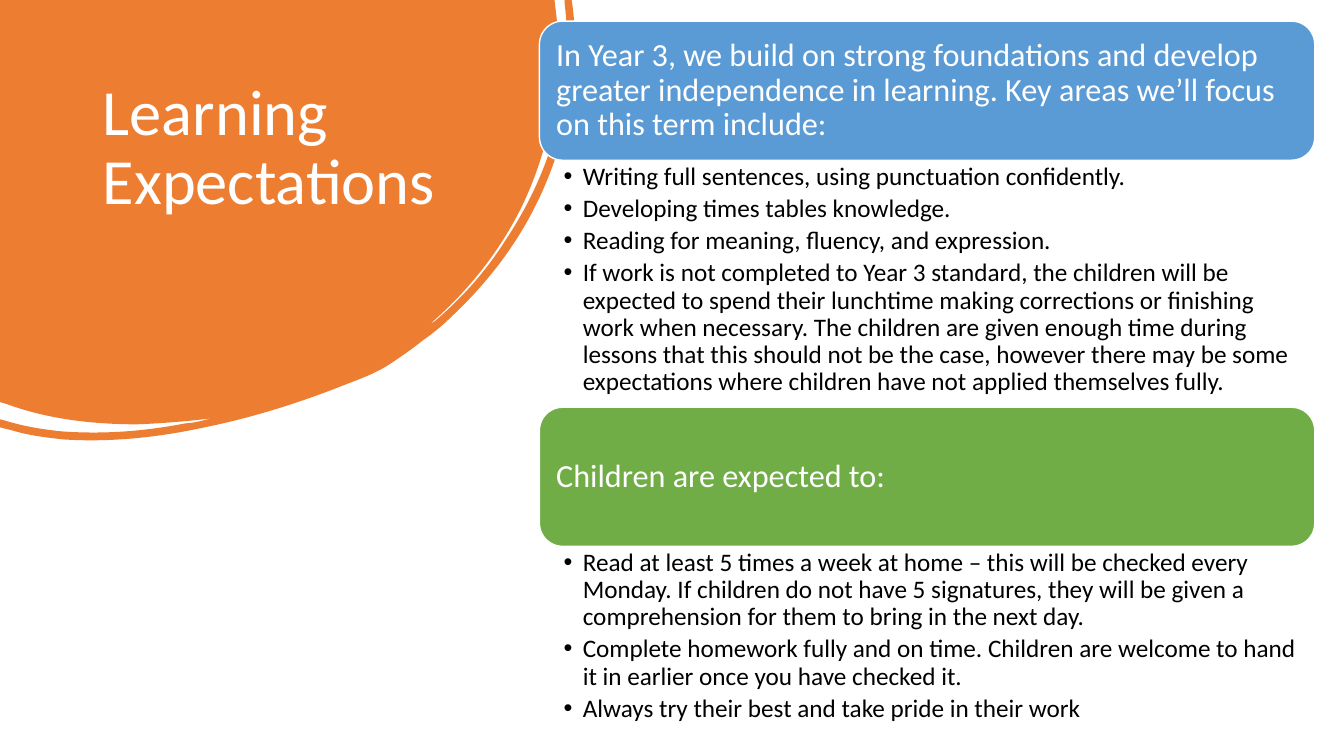
"""Build the Learning Expectations slide."""
from lxml import etree
from pptx import Presentation
from pptx.dml.color import RGBColor
from pptx.enum import shapes, text
from pptx.oxml import ns
from pptx.util import Inches, Pt

ORANGE = RGBColor(0xED, 0x7D, 0x31)
BLUE = RGBColor(0x5B, 0x9B, 0xD5)
GREEN = RGBColor(0x70, 0xAD, 0x47)
WHITE = RGBColor(0xFF, 0xFF, 0xFF)
BLACK = RGBColor(0, 0, 0)

LEFT, WIDTH, HEADING_HEIGHT = 5.35, 7.69, 1.38
BLOB_WIDTH, BLOB_HEIGHT = Inches(5.71), Inches(4.37)

SECTIONS = [
    (0.21, 2.45, BLUE,
     "In Year 3, we build on strong foundations and develop greater independence "
     "in learning. Key areas we’ll focus on this term include:",
     ["Writing full sentences, using punctuation confidently.",
      "Developing times tables knowledge.",
      "Reading for meaning, fluency, and expression.",
      "If work is not completed to Year 3 standard, the children will be expected "
      "to spend their lunchtime making corrections or finishing work when necessary. "
      "The children are given enough time during lessons that this should not be the "
      "case, however there may be some expectations where children have not applied "
      "themselves fully."]),
    (4.04, 1.87, GREEN,
     "Children are expected to:",
     ["Read at least 5 times a week at home – this will be checked every Monday. "
      "If children do not have 5 signatures, they will be given a comprehension for "
      "them to bring in the next day.",
      "Complete homework fully and on time. Children are welcome to hand it in "
      "earlier once you have checked it.",
      "Always try their best and take pride in their work"]),
]

BLOB_OUTLINE = [
    (5.5, 0), (5.52, 0.17),
    (5.53, 0.26, 5.53, 0.36, 5.53, 0.45),
    (5.53, 1.01, 5.42, 1.54, 5.18, 2.04),
    (4.96, 2.49, 4.65, 2.88, 4.27, 3.21),
    (4.29, 3.21, 4.3, 3.19, 4.32, 3.18),
    (4.59, 2.95, 4.82, 2.69, 5.01, 2.39),
    (5.43, 1.76, 5.65, 1.07, 5.62, 0.3),
    (5.62, 0.21, 5.61, 0.12, 5.6, 0.03),
    (5.6, 0), (5.67, 0), (5.68, 0.07),
    (5.74, 0.54, 5.68, 1.02, 5.53, 1.5),
    (5.33, 2.14, 4.97, 2.68, 4.48, 3.14),
    (4.39, 3.23, 4.29, 3.31, 4.19, 3.38),
    (4.09, 3.46, 3.99, 3.53, 3.87, 3.61),
    (3.75, 3.69, 3.6, 3.75, 3.44, 3.81),
    (2.99, 3.99, 2.52, 4.14, 2.03, 4.24),
    (1.57, 4.34, 1.1, 4.39, 0.63, 4.36),
    (0.45, 4.34, 0.28, 4.32, 0.12, 4.27),
    (0, 4.24), (0, 4.16), (0.04, 4.17),
    (0.23, 4.23, 0.42, 4.26, 0.61, 4.28),
    (1.03, 4.31, 1.43, 4.28, 1.84, 4.2),
    (1.89, 4.2, 1.93, 4.19, 1.98, 4.18),
    (2.02, 4.17, 2.06, 4.16, 2.1, 4.15),
    (1.86, 4.18, 1.61, 4.2, 1.36, 4.21),
    (0.92, 4.21, 0.48, 4.16, 0.07, 4.01),
    (0, 3.99),
]


def write(frame, lines, size, color, insets=(0.1, 0.05, 0.1, 0.05),
          anchor=text.MSO_ANCHOR.TOP, after=0, bullet=False):
    frame.word_wrap = True
    frame.auto_size = text.MSO_AUTO_SIZE.NONE
    frame.vertical_anchor = anchor
    (frame.margin_left, frame.margin_top,
     frame.margin_right, frame.margin_bottom) = map(Inches, insets)
    for index, line in enumerate(lines):
        para = frame.add_paragraph() if index else frame.paragraphs[0]
        para.alignment = text.PP_ALIGN.LEFT
        para.line_spacing = 0.9
        para.space_before = Pt(0)
        para.space_after = Pt(after)
        span = para.add_run()
        span.text = line
        span.font.name = "Calibri"
        span.font.size = Pt(size)
        span.font.color.rgb = color
        if bullet:
            para.level = 1
            properties = para._p.get_or_add_pPr()
            properties.set("marL", str(Inches(0.19)))
            properties.set("indent", str(Inches(-0.19)))
            etree.SubElement(properties, ns.qn("a:buFont"), typeface="Arial")
            etree.SubElement(properties, ns.qn("a:buChar"), char="•")


deck = Presentation()
deck.slide_width = Inches(13.33)
deck.slide_height = Inches(7.5)
page = deck.slides.add_slide(deck.slide_layouts[5])

builder = page.shapes.build_freeform(0, 0)
builder.add_line_segments([(Inches(part[-2]), Inches(part[-1])) for part in BLOB_OUTLINE])
blob = builder.convert_to_shape()
blob.width, blob.height = BLOB_WIDTH, BLOB_HEIGHT
blob.shadow.inherit = False
blob.fill.solid()
blob.fill.fore_color.rgb = ORANGE
blob.line.fill.background()

outline = next(blob._element.iter(ns.qn("a:path")))
outline.set("w", str(BLOB_WIDTH))
outline.set("h", str(BLOB_HEIGHT))
for segment, part in zip(outline.findall(ns.qn("a:lnTo")), BLOB_OUTLINE):
    if len(part) == 6:
        curve = etree.Element(ns.qn("a:cubicBezTo"))
        for x, y in zip(part[::2], part[1::2]):
            etree.SubElement(curve, ns.qn("a:pt"), x=str(Inches(x)), y=str(Inches(y)))
        outline.replace(segment, curve)
etree.SubElement(outline, ns.qn("a:close"))

title = page.shapes.title
title.left, title.top, title.width, title.height = map(Inches, (0.92, 0.74, 3.52, 2.22))
write(title.text_frame, ["Learning Expectations"], 46, WHITE)
page.shapes._spTree.append(title._element)

for top, list_height, color, heading, points in SECTIONS:
    banner = page.shapes.add_shape(
        shapes.MSO_SHAPE.ROUNDED_RECTANGLE, Inches(LEFT), Inches(top),
        Inches(WIDTH), Inches(HEADING_HEIGHT))
    banner.shadow.inherit = False
    banner.fill.solid()
    banner.fill.fore_color.rgb = color
    banner.line.color.rgb = WHITE
    banner.line.width = Pt(1)
    write(banner.text_frame, [heading], 23, WHITE, insets=(0.1, 0.1, 0.1, 0.1),
          anchor=text.MSO_ANCHOR.MIDDLE)

    box = page.shapes.add_textbox(Inches(LEFT), Inches(top + HEADING_HEIGHT),
                                  Inches(WIDTH), Inches(list_height))
    write(box.text_frame, points, 18, BLACK, insets=(0.24, 0.03, 0.18, 0.03),
          after=3.6, bullet=True)

deck.save("out.pptx")
